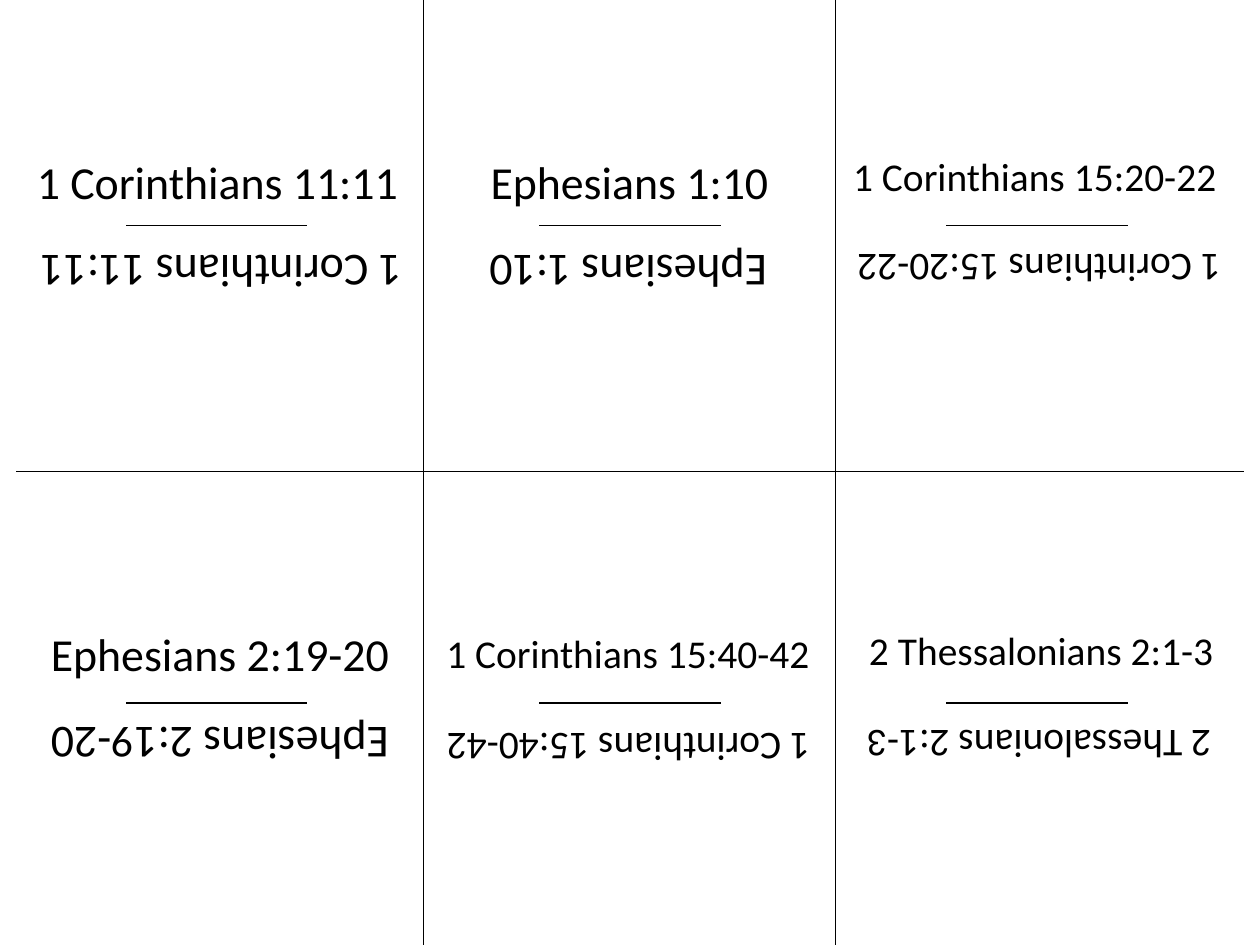
from itertools import product
from typing import NamedTuple

from pptx import Presentation
from pptx.dml.color import RGBColor
from pptx.enum.shapes import MSO_CONNECTOR
from pptx.enum.text import MSO_AUTO_SIZE, PP_ALIGN
from pptx.oxml.ns import qn
from pptx.slide import Slide
from pptx.util import Pt
from lxml.etree import SubElement

BLACK = RGBColor(0x00, 0x00, 0x00)
FONT = "Calibri"
SLIDE_W, SLIDE_H = 720, 540
LABEL_W = 229.7
LARGE, SMALL = 26.2, 22.5
LABEL_HEIGHTS = {LARGE: 38.9, SMALL: 34.6}

MARGIN = 9.4
ROW_CUT = 269.3
COLUMN_CUTS = (241.9, 477.4)
FOLD_W = 103.7
FOLD_LEFTS = (72, 308.2, 540.7)
FOLD_TOPS = (128.9, 401.8)


class Position(NamedTuple):
    left: float
    top: float


class Card(NamedTuple):
    verse: str
    size: float
    upright: Position
    flipped: Position


CARDS = (
    Card("1 Corinthians 11:11", LARGE, Position(9.4, 84.2), Position(11.5, 136.8)),
    Card("Ephesians 1:10", LARGE, Position(244.8, 84.2), Position(244.1, 136.8)),
    Card("1 Corinthians 15:20-22", SMALL, Position(476.6, 83.5), Position(478.8, 136.8)),
    Card("Ephesians 2:19-20", LARGE, Position(10.8, 354.2), Position(10.8, 406.8)),
    Card("1 Corinthians 15:40-42", SMALL, Position(244.1, 355.7), Position(244.1, 410.4)),
    Card("2 Thessalonians 2:1-3", SMALL, Position(480.2, 354.2), Position(478.8, 409)),
)


def draw_line(slide: Slide, x1: float, y1: float, x2: float, y2: float) -> None:
    rule = slide.shapes.add_connector(
        MSO_CONNECTOR.STRAIGHT, Pt(x1), Pt(y1), Pt(x2), Pt(y2))
    rule.line.color.rgb = BLACK
    rule.line.width = Pt(0.75)
    SubElement(rule._element.spPr, qn("a:effectLst"))


def draw_label(slide: Slide, card: Card, position: Position, rotation: float) -> None:
    label = slide.shapes.add_textbox(
        Pt(position.left), Pt(position.top), Pt(LABEL_W), Pt(LABEL_HEIGHTS[card.size]))
    label.rotation = rotation
    frame = label.text_frame
    frame.word_wrap = True
    frame.auto_size = MSO_AUTO_SIZE.SHAPE_TO_FIT_TEXT
    paragraph = frame.paragraphs[0]
    paragraph.alignment = PP_ALIGN.CENTER
    run = paragraph.add_run()
    run.text = card.verse
    run.font.name = FONT
    run.font.size = Pt(card.size)
    run.font.color.rgb = BLACK


def draw_card(slide: Slide, card: Card) -> None:
    draw_label(slide, card, card.upright, 0)
    draw_label(slide, card, card.flipped, 180)


def main() -> None:
    deck = Presentation()
    deck.slide_width, deck.slide_height = Pt(SLIDE_W), Pt(SLIDE_H)
    slide = deck.slides.add_slide(deck.slide_layouts[6])

    # Cutting lines between the cards
    draw_line(slide, MARGIN, ROW_CUT, SLIDE_W - MARGIN, ROW_CUT)
    for x in COLUMN_CUTS:
        draw_line(slide, x, 0, x, SLIDE_H)

    # Fold line in the middle of each card
    for y, x in product(FOLD_TOPS, FOLD_LEFTS):
        draw_line(slide, x, y, x + FOLD_W, y)

    # Verse on both sides of each fold
    for card in CARDS:
        draw_card(slide, card)

    deck.save("out.pptx")


if __name__ == "__main__":
    main()
